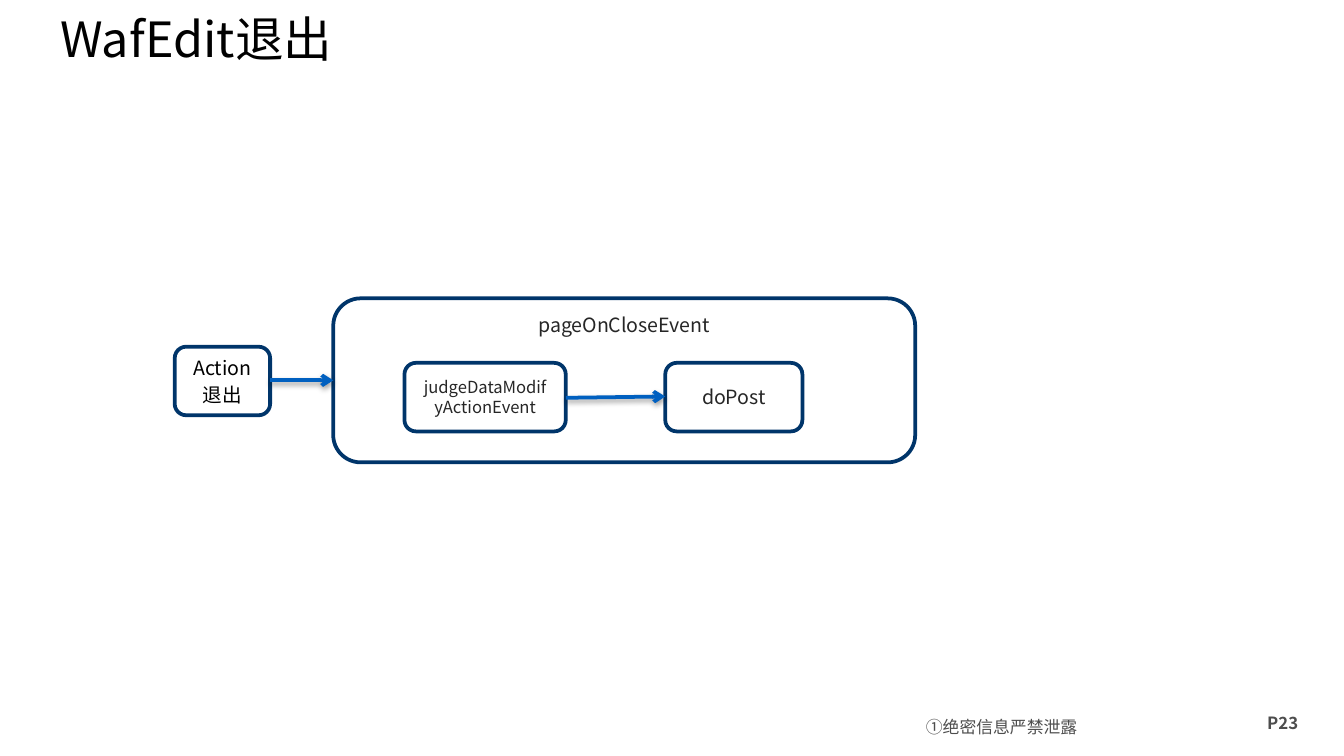
from lxml import etree
from pptx import Presentation
from pptx.dml.color import RGBColor
from pptx.enum.shapes import MSO_CONNECTOR, MSO_SHAPE
from pptx.enum.text import MSO_ANCHOR, PP_ALIGN
from pptx.oxml import parse_xml
from pptx.oxml.ns import nsdecls, qn
from pptx.util import Inches, Pt

ROUND = MSO_SHAPE.ROUNDED_RECTANGLE
LINE = MSO_CONNECTOR.STRAIGHT
TOP, MID = MSO_ANCHOR.TOP, MSO_ANCHOR.MIDDLE
LEFT, CENTER, FULL = PP_ALIGN.LEFT, PP_ALIGN.CENTER, PP_ALIGN.JUSTIFY

WIDTH = Inches(10)
HEIGHT = WIDTH * 9 // 16
FACE = "Noto Sans CJK SC"
WHITE = RGBColor(0xFF, 0xFF, 0xFF)
BLACK = RGBColor(0, 0, 0)
DARK = RGBColor(0x26, 0x26, 0x26)
GRAY = RGBColor(0x4D, 0x4D, 0x4D)
NAVY = RGBColor(0x00, 0x35, 0x6A)
BLUE = RGBColor(0x00, 0x60, 0xC0)

SHADOW = f"""<a:effectLst {nsdecls("a")}>
<a:outerShdw blurRad="{Pt(3.1)}" dist="{Pt(1.6)}" dir="5400000" rotWithShape="0">
<a:srgbClr val="000000"><a:alpha val="38000"/></a:srgbClr>
</a:outerShdw></a:effectLst>"""


def apply(target, values):
    for name, value in values.items():
        setattr(target, name, value)


def write(shape, lines, size, color, bold=False, align=LEFT, anchor=TOP,
          inset=(0.1, 0.05), pitch=None):
    side, edge = map(Inches, inset)
    frame = shape.text_frame
    apply(frame, {"word_wrap": True, "vertical_anchor": anchor,
                  "margin_left": side, "margin_right": side,
                  "margin_top": edge, "margin_bottom": edge})
    for i, line in enumerate(lines):
        para = frame.add_paragraph() if i else frame.paragraphs[0]
        apply(para, {"alignment": align, "line_spacing": pitch,
                     "space_before": Pt(0.2 * size if i else 0)})
        run = para.add_run()
        run.text = line
        apply(run.font, {"name": FACE, "size": Pt(size), "bold": bold})
        run.font.color.rgb = color
        # East Asian glyphs use their own font slot
        east = etree.SubElement(run.font._element, qn("a:ea"))
        east.set("typeface", FACE)


def label(slide, area, text, size, color, **style):
    box = slide.shapes.add_textbox(*map(Inches, area))
    write(box, [text], size, color, **style)


def node(slide, area, lines, size, color, anchor=MID):
    box = slide.shapes.add_shape(ROUND, *map(Inches, area))
    box.shadow.inherit = False
    box.fill.solid()
    box.fill.fore_color.rgb = WHITE
    box.line.color.rgb = NAVY
    box.line.width = Pt(2)
    write(box, lines, size, color, align=CENTER, anchor=anchor)


def arrow(slide, start, end):
    link = slide.shapes.add_connector(LINE, *map(Inches, start + end))
    link.line.color.rgb = BLUE
    link.line.width = Pt(2)
    tip = etree.SubElement(link.line._get_or_add_ln(), qn("a:tailEnd"))
    tip.set("type", "arrow")
    link._element.spPr.append(parse_xml(SHADOW))


def main():
    deck = Presentation()
    apply(deck, {"slide_width": WIDTH, "slide_height": HEIGHT})
    slide = deck.slides.add_slide(deck.slide_layouts[6])

    # Footer and title
    label(slide, (6.81, 5.28, 1.77, 0.27), "①绝密信息严禁泄露", 9, GRAY,
          align=FULL, inset=(0.08, 0.01), pitch=Pt(14))
    label(slide, (9.33, 5.25, 0.56, 0.25), "P23", 9, GRAY, bold=True)
    label(slide, (0.35, 0, 7.8, 0.57), "WafEdit退出", 26, BLACK, anchor=MID)

    # Exit action and the close event with its two steps
    node(slide, (1.3, 2.58, 0.71, 0.51), ["Action", "退出"], 10.5, BLACK)
    node(slide, (2.48, 2.22, 4.33, 1.22), ["pageOnCloseEvent"], 10.5, DARK, TOP)
    node(slide, (3.01, 2.7, 1.2, 0.51), ["judgeDataModifyActionEvent"], 8.9, DARK)
    node(slide, (4.95, 2.7, 1.02, 0.51), ["doPost"], 10.5, DARK)

    # Flow
    arrow(slide, (2.01, 2.83), (2.48, 2.83))
    arrow(slide, (4.21, 2.96), (4.95, 2.95))

    deck.save("out.pptx")


if __name__ == "__main__":
    main()
